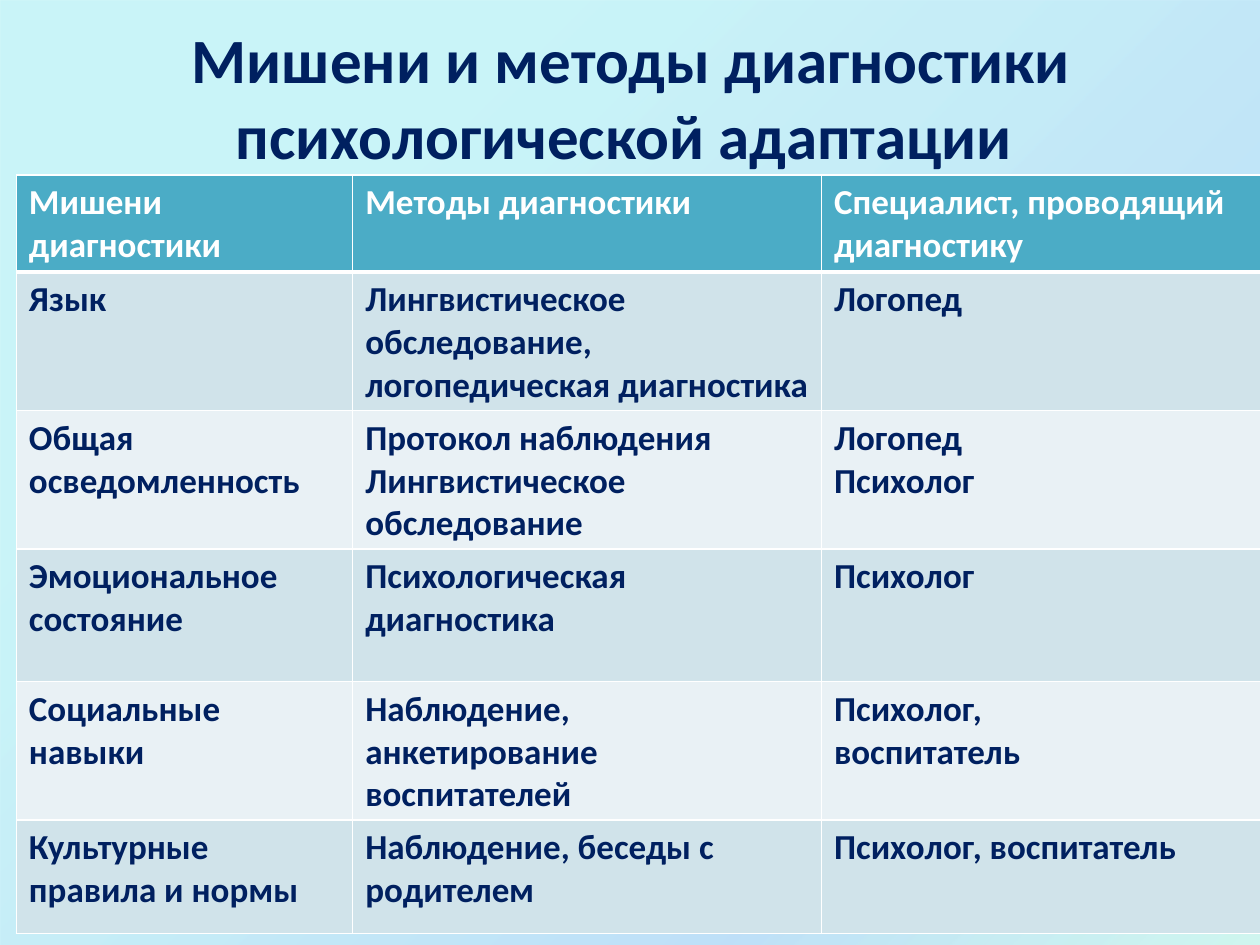
"""Build the slide on targets and methods of diagnosing psychological adaptation."""
from typing import NamedTuple

from lxml import etree
from pptx import Presentation
from pptx.dml.color import RGBColor
from pptx.enum.shapes import MSO_SHAPE
from pptx.enum.text import MSO_ANCHOR, PP_ALIGN
from pptx.oxml.ns import qn
from pptx.util import Inches, Pt

RECTANGLE = MSO_SHAPE.RECTANGLE
MIDDLE = MSO_ANCHOR.MIDDLE
CENTER = PP_ALIGN.CENTER
FONT = "Calibri"
COLORS = {
    "navy": "002060",
    "outline": "0066FF",
    "white": "FFFFFF",
    "header": "4BACC6",
    "odd": "D0E3EA",
    "even": "E9F1F5",
}


class GradientStop(NamedTuple):
    position: int
    color: str
    opacity: int


class Target(NamedTuple):
    name: str
    methods: str
    specialist: str


BACKDROP = [
    GradientStop(25, "21D6E0", 23),
    GradientStop(75, "0087E6", 25),
    GradientStop(100, "03D4A8", 18),
    GradientStop(100, "005CBF", 26),
]
TITLE = "Мишени и методы диагностики психологической адаптации "
TARGETS = [
    Target("Мишени диагностики", "Методы диагностики",
           "Специалист, проводящий диагностику"),
    Target("Язык", "Лингвистическое обследование, логопедическая диагностика",
           "Логопед"),
    Target("Общая осведомленность",
           "Протокол наблюдения\nЛингвистическое обследование",
           "Логопед\nПсихолог"),
    Target("Эмоциональное состояние", "Психологическая диагностика", "Психолог"),
    Target("Социальные навыки", "Наблюдение, анкетирование воспитателей",
           "Психолог,\nвоспитатель"),
    Target("Культурные правила и нормы", "Наблюдение, беседы с родителем",
           "Психолог, воспитатель"),
]
COLUMN_WIDTHS = [2.67, 3.72, 3.49]
ROW_HEIGHTS = [0.73, 1.05, 1.05, 1.05, 0.73, 0.9]


def add_solid(parent, color: str):
    """Add a solid fill element and return its colour element."""
    solid = etree.SubElement(parent, qn("a:solidFill"))
    return etree.SubElement(solid, qn("a:srgbClr"), val=color)


def add_run(paragraph, text: str, size: int, color: str):
    """Add a bold run and return it."""
    run = paragraph.add_run()
    run.text = text
    run.font.name = FONT
    run.font.size = Pt(size)
    run.font.bold = True
    run.font.color.rgb = RGBColor.from_string(color)
    return run


def draw_backdrop(slide) -> None:
    """Draw the translucent diagonal gradient behind the content."""
    backdrop = slide.shapes.add_shape(RECTANGLE, 0, 0, Inches(10), Inches(7.67))
    backdrop.shadow.inherit = False
    backdrop.line.fill.background()
    backdrop.fill.gradient()
    gradient = backdrop._element.spPr.find(qn("a:gradFill"))
    for child in list(gradient):
        gradient.remove(child)
    stops = etree.SubElement(gradient, qn("a:gsLst"))
    for stop in BACKDROP:
        mark = etree.SubElement(stops, qn("a:gs"), pos=str(stop.position * 1000))
        color = etree.SubElement(mark, qn("a:srgbClr"), val=stop.color)
        etree.SubElement(color, qn("a:alpha"), val=str(stop.opacity * 1000))
    etree.SubElement(gradient, qn("a:lin"), ang=str(45 * 60000), scaled="1")


def draw_title(slide) -> None:
    """Draw the centred, outlined title."""
    title = slide.shapes.add_textbox(
        Inches(0.51), Inches(0.13), Inches(9), Inches(1.27))
    frame = title.text_frame
    frame.word_wrap = True
    frame.vertical_anchor = MIDDLE
    paragraph = frame.paragraphs[0]
    paragraph.alignment = CENTER
    run = add_run(paragraph, TITLE, 36, COLORS["navy"])
    outline = etree.Element(qn("a:ln"), w=str(Pt(1.45)))
    add_solid(outline, COLORS["outline"])
    run._r.get_or_add_rPr().insert(0, outline)


def set_borders(cell, top: int, bottom: int) -> None:
    """Give a cell white borders with the given top and bottom widths."""
    properties = cell._tc.get_or_add_tcPr()
    for side, width in {"L": 1, "R": 1, "T": top, "B": bottom}.items():
        border = etree.SubElement(properties, qn(f"a:ln{side}"), w=str(Pt(width)))
        add_solid(border, COLORS["white"])


def draw_table(slide) -> None:
    """Draw the table of targets, methods and specialists."""
    table = slide.shapes.add_table(
        len(ROW_HEIGHTS), len(COLUMN_WIDTHS), Inches(0.13), Inches(1.39),
        Inches(sum(COLUMN_WIDTHS)), Inches(sum(ROW_HEIGHTS))).table
    for column, width in zip(table.columns, COLUMN_WIDTHS):
        column.width = Inches(width)
    for index, (row, height, target) in enumerate(
            zip(table.rows, ROW_HEIGHTS, TARGETS)):
        row.height = Inches(height)
        is_header = index == 0
        band = "header" if is_header else "odd" if index % 2 else "even"
        ink = COLORS["white" if is_header else "navy"]
        for cell, text in zip(row.cells, target):
            set_borders(cell, 3 if index == 1 else 1, 3 if is_header else 1)
            cell.fill.solid()
            cell.fill.fore_color.rgb = RGBColor.from_string(COLORS[band])
            frame = cell.text_frame
            for number, line in enumerate(text.split("\n")):
                paragraph = frame.add_paragraph() if number else frame.paragraphs[0]
                add_run(paragraph, line, 20, ink)


def main() -> None:
    """Build and save the presentation."""
    presentation = Presentation()
    presentation.slide_width = Inches(10)
    presentation.slide_height = Inches(7.5)
    slide = presentation.slides.add_slide(presentation.slide_layouts[6])
    draw_backdrop(slide)
    draw_title(slide)
    draw_table(slide)
    presentation.save("out.pptx")


if __name__ == "__main__":
    main()
